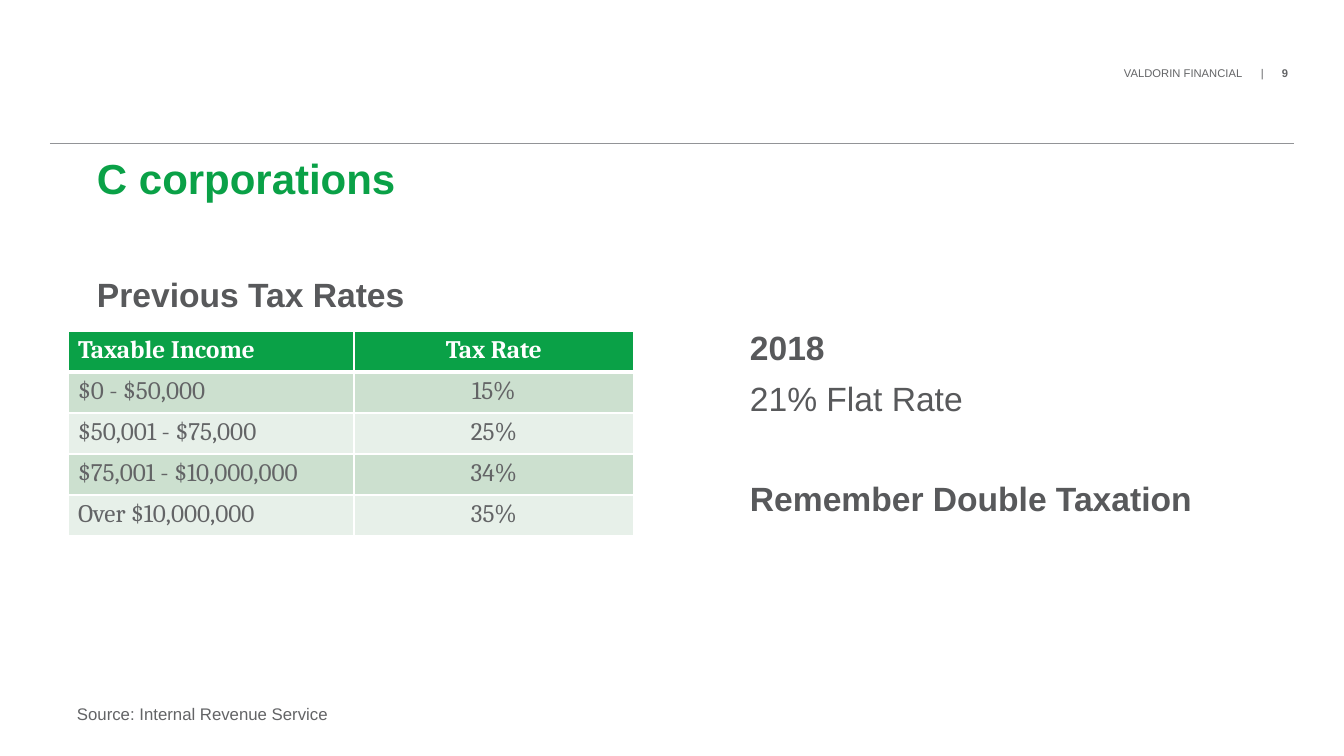
import dataclasses
import typing

import lxml.etree
import pptx
import pptx.dml.color
import pptx.enum.shapes
import pptx.enum.text
import pptx.oxml.ns
import pptx.util

EMU_PER_PX = 914400 / 100.8


@dataclasses.dataclass(frozen=True)
class Theme:
    green: str = "0AA147"
    heading: str = "58595B"
    muted: str = "636466"
    rule: str = "929497"
    white: str = "FFFFFF"
    bands: tuple[str, str] = ("CCE0CF", "E7F0E9")
    sans: str = "Arial"
    serif: str = "Cambria"
    title_size: int = 30
    body_size: int = 24
    table_size: int = 18
    source_size: int = 12
    header_size: int = 8


THEME = Theme()


class Span(typing.NamedTuple):
    text: str
    bold: bool = False


@dataclasses.dataclass(frozen=True)
class Line:
    spans: tuple[Span, ...]
    before: int = 0


@dataclasses.dataclass(frozen=True)
class TextBlock:
    left: int
    top: int
    width: int
    height: int
    lines: tuple[Line, ...]
    size: int
    color: str
    spacing: int | None = None
    tabs: tuple[int, ...] = ()


class TaxBracket(typing.NamedTuple):
    income: str
    rate: str


BLOCKS = (
    TextBlock(1124, 66, 165, 15,
              (Line((Span("VALDORIN FINANCIAL\t|\t"), Span("9", True))),),
              THEME.header_size, THEME.muted, tabs=(137, 158)),
    TextBlock(97, 159, 1142, 106, (Line((Span("C corporations", True),)),),
              THEME.title_size, THEME.green, 31),
    TextBlock(97, 278, 1142, 50, (Line((Span("Previous Tax Rates", True),)),),
              THEME.body_size, THEME.heading, 26),
    TextBlock(750, 331, 594, 200,
              (Line((Span("2018", True),)),
               Line((Span("21% Flat Rate"),), 10),
               Line((Span("Remember Double Taxation", True),), 46)),
              THEME.body_size, THEME.heading, 26),
    TextBlock(77, 704, 606, 20,
              (Line((Span("Source: Internal Revenue Service"),)),),
              THEME.source_size, THEME.muted),
)

TAX_TABLE = (
    TaxBracket("Taxable Income", "Tax Rate"),
    TaxBracket("$0 - $50,000", "15%"),
    TaxBracket("$50,001 - $75,000", "25%"),
    TaxBracket("$75,001 - $10,000,000", "34%"),
    TaxBracket("Over $10,000,000", "35%"),
)
COLUMN_WIDTHS = (286, 280)
ROW_HEIGHT = 41


def px(length: int) -> pptx.util.Emu:
    return pptx.util.Emu(round(length * EMU_PER_PX))


def rgb(color: str) -> pptx.dml.color.RGBColor:
    return pptx.dml.color.RGBColor.from_string(color)


def add_child(parent, tag: str, **attributes: str):
    child = lxml.etree.SubElement(parent, pptx.oxml.ns.qn(tag))
    for name, value in attributes.items():
        child.set(name, value)
    return child


def write_span(para, text: str, *, size: int, color: str, font: str = THEME.sans,
               bold: bool = False) -> None:
    span = para.add_run()
    span.text = text
    span.font.name = font
    span.font.size = pptx.util.Pt(size)
    span.font.bold = bold
    span.font.color.rgb = rgb(color)


def add_text_block(page, block: TextBlock) -> None:
    box = page.shapes.add_textbox(*map(px, (block.left, block.top, block.width, block.height)))
    frame = box.text_frame
    frame.word_wrap = True
    frame.margin_left = frame.margin_right = frame.margin_top = frame.margin_bottom = 0
    for index, line in enumerate(block.lines):
        para = frame.add_paragraph() if index else frame.paragraphs[0]
        if block.tabs:
            tab_list = add_child(para._p.get_or_add_pPr(), "a:tabLst")
            for position in block.tabs:
                add_child(tab_list, "a:tab", pos=str(px(position)), algn="l")
        if block.spacing:
            para.line_spacing = pptx.util.Pt(block.spacing)
        if line.before:
            para.space_before = pptx.util.Pt(line.before)
        for span in line.spans:
            write_span(para, span.text, size=block.size, color=block.color, bold=span.bold)


def add_rule(page, left: int, right: int, top: int) -> None:
    rule = page.shapes.add_connector(
        pptx.enum.shapes.MSO_CONNECTOR.STRAIGHT, px(left), px(top), px(right), px(top))
    rule.line.color.rgb = rgb(THEME.rule)
    rule.line.width = pptx.util.Pt(0.5)
    add_child(rule._element.spPr, "a:effectLst")


def set_borders(cell, widths: dict[str, int]) -> None:
    properties = cell._tc.get_or_add_tcPr()
    for index, (side, width) in enumerate(widths.items()):
        border = lxml.etree.Element(pptx.oxml.ns.qn(f"a:ln{side}"))
        border.set("w", str(pptx.util.Pt(width)))
        add_child(add_child(border, "a:solidFill"), "a:srgbClr", val=THEME.white)
        properties.insert(index, border)


def add_tax_table(page, left: int, top: int) -> None:
    table = page.shapes.add_table(
        len(TAX_TABLE), len(COLUMN_WIDTHS), px(left), px(top),
        px(sum(COLUMN_WIDTHS)), px(ROW_HEIGHT * len(TAX_TABLE))).table
    for column, width in zip(table.columns, COLUMN_WIDTHS):
        column.width = px(width)
    for row_index, bracket in enumerate(TAX_TABLE):
        table.rows[row_index].height = px(ROW_HEIGHT)
        header = row_index == 0
        for column_index, text in enumerate(bracket):
            cell = table.cell(row_index, column_index)
            cell.fill.solid()
            cell.fill.fore_color.rgb = rgb(
                THEME.green if header else THEME.bands[(row_index - 1) % 2])
            set_borders(cell, {"L": 1, "R": 1, "T": 3 if row_index == 1 else 1,
                               "B": 3 if header else 1})
            para = cell.text_frame.paragraphs[0]
            if column_index:
                para.alignment = pptx.enum.text.PP_ALIGN.CENTER
            write_span(para, text, size=THEME.table_size, font=THEME.serif,
                       color=THEME.white if header else THEME.muted, bold=header)


def main() -> None:
    deck = pptx.Presentation()
    deck.slide_width, deck.slide_height = px(1344), px(756)
    page = deck.slides.add_slide(deck.slide_layouts[6])
    add_rule(page, 50, 1294, 143)
    for block in BLOCKS:
        add_text_block(page, block)
    add_tax_table(page, 68, 331)
    deck.save("out.pptx")


if __name__ == "__main__":
    main()
